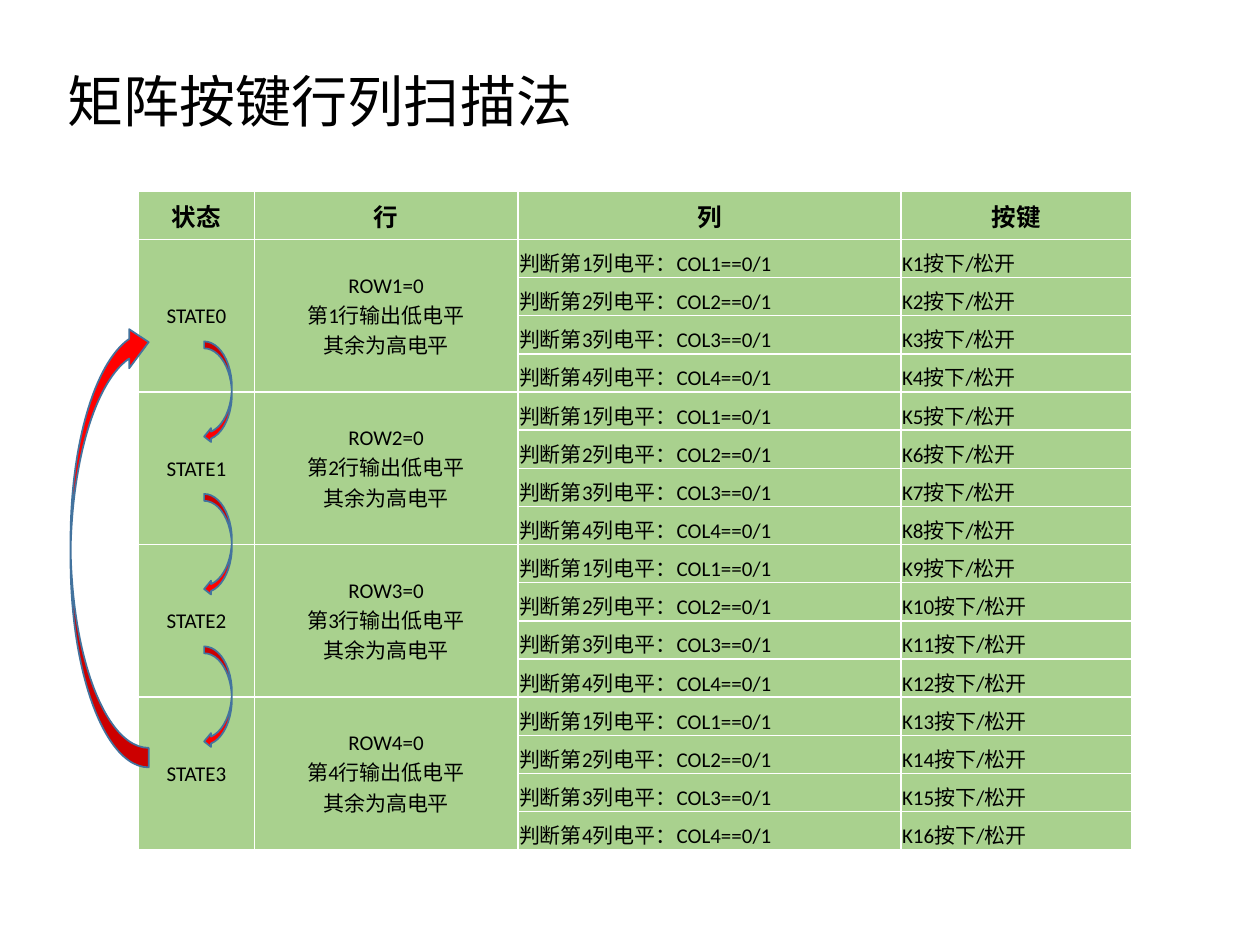
from lxml import etree
from pptx import Presentation
from pptx.dml.color import RGBColor
from pptx.enum.shapes import MSO_SHAPE
from pptx.enum.text import MSO_ANCHOR, PP_ALIGN
from pptx.oxml.ns import qn
from pptx.util import Inches, Pt

CENTER, LEFT = PP_ALIGN.CENTER, PP_ALIGN.LEFT
MIDDLE, BOTTOM = MSO_ANCHOR.MIDDLE, MSO_ANCHOR.BOTTOM
CURVED_ARROW = MSO_SHAPE.CURVED_LEFT_ARROW

FONT, CJK_FONT = "Calibri", "Noto Sans CJK SC"
BLACK, WHITE, GREEN, RED, BLUE = "000000", "FFFFFF", "A9D18E", "FF0000", "43739E"

HEADERS = ["状态", "行", "列", "按键"]
COLUMN_WIDTHS = [0.92, 2.09, 3.04, 1.83]
HEADER_HEIGHT = 0.38
STATES = 4
KEY_COLUMNS = 4


def color(hex_string):
    return RGBColor.from_string(hex_string)


def style(paragraph, size, bold=False, font_name=FONT):
    font = paragraph.font
    font.name, font.size, font.bold = font_name, Pt(size), bold
    font.color.rgb = color(BLACK)


def add_title(slide, left, top, width, height):
    title = slide.shapes.add_textbox(
        Inches(left), Inches(top), Inches(width), Inches(height))
    frame = title.text_frame
    frame.word_wrap = True
    frame.vertical_anchor = MIDDLE
    heading = frame.paragraphs[0]
    heading.text = "矩阵按键行列扫描法"
    heading.line_spacing = 0.9
    style(heading, 32)


def add_borders(cell):
    properties = cell._tc.get_or_add_tcPr()
    for side in ("a:lnL", "a:lnR", "a:lnT", "a:lnB"):
        line = etree.SubElement(properties, qn(side), w=str(Pt(1)))
        fill = etree.SubElement(line, qn("a:solidFill"))
        etree.SubElement(fill, qn("a:srgbClr"), val=WHITE)


def fill_cell(cell, lines, align=CENTER, anchor=MIDDLE, size=12, bold=False):
    cell.text = "\n".join(lines)
    cell.vertical_anchor = anchor
    for paragraph in cell.text_frame.paragraphs:
        paragraph.alignment = align
        style(paragraph, size, bold)


def add_scan_table(slide, left, top, width, height):
    scan_count = STATES * KEY_COLUMNS
    table = slide.shapes.add_table(
        scan_count + 1, len(HEADERS),
        Inches(left), Inches(top), Inches(width), Inches(height)).table
    for column, column_width in zip(table.columns, COLUMN_WIDTHS):
        column.width = Inches(column_width)
    for row in table.rows:
        row.height = Inches((height - HEADER_HEIGHT) / scan_count)
    table.rows[0].height = Inches(HEADER_HEIGHT)

    for cell in table.iter_cells():
        add_borders(cell)
        cell.fill.solid()
        cell.fill.fore_color.rgb = color(GREEN)
        cell.margin_left = cell.margin_right = cell.margin_top = Inches(0.01)
        cell.margin_bottom = 0

    for index, header in enumerate(HEADERS):
        fill_cell(table.cell(0, index), [header], size=14, bold=True)

    # One block of four key columns for each scan state
    for state in range(STATES):
        first = 1 + state * KEY_COLUMNS
        for index in (0, 1):
            table.cell(first, index).merge(
                table.cell(first + KEY_COLUMNS - 1, index))
        fill_cell(table.cell(first, 0), [f"STATE{state}"])
        row_output = table.cell(first, 1)
        fill_cell(row_output, [f"ROW{state + 1}=0",
                               f"第{state + 1}行输出低电平", "其余为高电平"])
        style(row_output.text_frame.paragraphs[2], 12, font_name=CJK_FONT)
        for offset in range(KEY_COLUMNS):
            number, row = offset + 1, first + offset
            fill_cell(table.cell(row, 2),
                      [f"判断第{number}列电平：COL{number}==0/1"], LEFT, BOTTOM)
            fill_cell(table.cell(row, 3), [f"K{row}按下/松开"], LEFT, BOTTOM)


def add_curved_arrow(slide, left, top, width, height, rotation=0):
    arrow = slide.shapes.add_shape(
        CURVED_ARROW, Inches(left), Inches(top), Inches(width), Inches(height))
    arrow.rotation = rotation
    arrow.shadow.inherit = False
    arrow.fill.solid()
    arrow.fill.fore_color.rgb = color(RED)
    arrow.line.color.rgb = color(BLUE)
    arrow.line.width = Pt(1)


def add_state_arrows(slide, left, top, pitch):
    # Step from each state to the next
    for step in range(STATES - 1):
        add_curved_arrow(slide, left, top + step * pitch, 0.22, 0.81)
    # Return from the last state to the first
    add_curved_arrow(slide, left - 1.06, top - 0.15, 0.62, 3.53, rotation=180)


def main():
    presentation = Presentation()
    presentation.slide_width, presentation.slide_height = Inches(10), Inches(7.5)
    slide = presentation.slides.add_slide(presentation.slide_layouts[6])
    add_title(slide, 0.44, 0.4, 8.62, 0.85)
    add_scan_table(slide, 1.1, 1.52, 7.88, 5.23)
    add_state_arrows(slide, 1.62, 2.71, 1.21)
    presentation.save("out.pptx")


if __name__ == "__main__":
    main()
